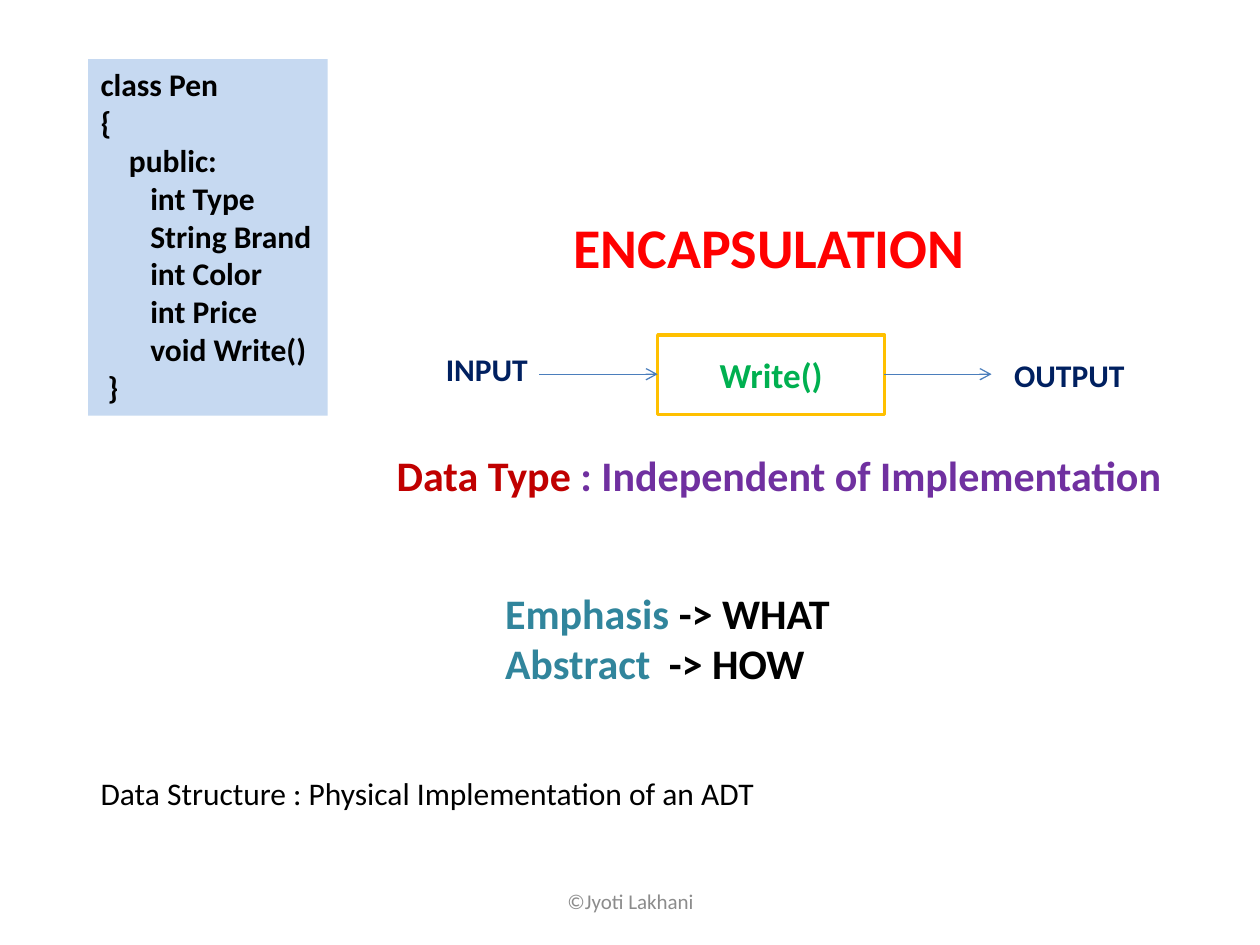
import pptx
import pptx.dml.color
import pptx.enum.shapes
import pptx.enum.text
import pptx.oxml.ns
import pptx.util
from lxml import etree

COLORS = {
    "black": "000000", "grey": "8C8C8C", "navy": "002060", "red": "FF0000",
    "dark_red": "C00000", "purple": "7030A0", "teal": "31859C",
    "green": "00B050", "gold": "FFC000", "blue": "4B7EBC", "pale": "C6D9F1",
}
ALIGN = pptx.enum.text.PP_ALIGN
ANCHOR = pptx.enum.text.MSO_ANCHOR
AUTO_SIZE = pptx.enum.text.MSO_AUTO_SIZE
COLUMNS, ROWS = 100, 75

CODE = """class Pen
{
    public:
       int Type
       String Brand
       int Color
       int Price
       void Write()
 }"""


def color(name):
    return pptx.dml.color.RGBColor.from_string(COLORS[name])


def add_xml(parent, tag, **attributes):
    return etree.SubElement(parent, pptx.oxml.ns.qn(tag), **attributes)


class SlideBuilder:
    """Style and current slide; lengths are columns and rows of a 100 x 75 grid."""

    font = "Calibri"

    def __init__(self, deck):
        self.column = deck.slide_width / COLUMNS
        self.row = deck.slide_height / ROWS
        self.slide = deck.slides.add_slide(deck.slide_layouts[5])

    def place(self, left, top, width, height):
        return (round(left * self.column), round(top * self.row),
                round(width * self.column), round(height * self.row))

    def fill_text(self, shape, paragraphs, size, bold=True, align=ALIGN.LEFT,
                  anchor=ANCHOR.TOP, fit=True, tab=None):
        """Fill a shape with paragraphs, each a list of (text, color name) runs."""
        frame = shape.text_frame
        frame.word_wrap = not fit
        frame.auto_size = AUTO_SIZE.SHAPE_TO_FIT_TEXT if fit else AUTO_SIZE.NONE
        frame.vertical_anchor = anchor
        for index, runs in enumerate(paragraphs):
            paragraph = frame.add_paragraph() if index else frame.paragraphs[0]
            paragraph.alignment = align
            if tab:
                stops = add_xml(paragraph._p.get_or_add_pPr(), "a:tabLst")
                add_xml(stops, "a:tab", pos=str(round(tab * self.column)), algn="l")
            for text, color_name in runs:
                run = paragraph.add_run()
                run.text = text
                run.font.name = self.font
                run.font.size = pptx.util.Pt(size)
                run.font.bold = bold
                run.font.color.rgb = color(color_name)

    def title(self, box, text, color_name, size):
        heading = self.slide.shapes.title
        heading.left, heading.top, heading.width, heading.height = self.place(*box)
        self.fill_text(heading, [[(text, color_name)]], size)

    def text(self, box, paragraphs, size, **style):
        self.fill_text(self.slide.shapes.add_textbox(*self.place(*box)),
                       paragraphs, size, **style)

    def panel(self, box, paragraphs, size, fill=None, outline=None, **style):
        panel = self.slide.shapes.add_shape(
            pptx.enum.shapes.MSO_SHAPE.RECTANGLE, *self.place(*box))
        panel.shadow.inherit = False
        if fill:
            panel.fill.solid()
            panel.fill.fore_color.rgb = color(fill)
        else:
            panel.fill.background()
        if outline:
            panel.line.color.rgb = color(outline)
            panel.line.width = pptx.util.Pt(2)
        else:
            panel.line.fill.background()
        self.fill_text(panel, paragraphs, size, **style)

    def arrow(self, start, end, row):
        arrow = self.slide.shapes.add_connector(
            pptx.enum.shapes.MSO_CONNECTOR.STRAIGHT,
            *self.place(start, row, end, row))
        arrow.line.color.rgb = color("blue")
        arrow.line.width = pptx.util.Pt(0.75)
        add_xml(arrow.line._get_or_add_ln(), "a:tailEnd", type="arrow")
        add_xml(arrow._element.spPr, "a:effectLst")


def main():
    deck = pptx.Presentation()
    deck.slide_width = pptx.util.Inches(10)
    deck.slide_height = pptx.util.Inches(7.5)
    page = SlideBuilder(deck)

    page.title((44.5, 16.4, 33.4, 6.4), "ENCAPSULATION", "red", 32)
    page.panel((7, 4.7, 19, 28.3),
               [[(line, "black")] for line in CODE.split("\n")], 18, fill="pale")

    page.panel((52.2, 26.6, 18, 6.3), [[("Write()", "green")]], 20,
               outline="gold", align=ALIGN.CENTER, anchor=ANCHOR.MIDDLE, fit=False)
    for start, end in ((42.8, 52.2), (70.2, 78.7)):
        page.arrow(start, end, 29.7)
    page.text((34.4, 27.3, 8.6, 4), [[("INPUT", "navy")]], 18)
    page.text((79.5, 27.8, 10.9, 4), [[("OUTPUT", "navy")]], 18)

    page.text((30.5, 35.2, 63.3, 5),
              [[("Data Type ", "dark_red"),
                (": Independent of Implementation", "purple")]], 24)
    page.text((39.1, 46.1, 28.8, 9.1),
              [[("Emphasis", "teal"), (" -> WHAT", "black")],
               [("Abstract", "teal"), ("\t-> HOW", "black")]], 24, tab=13)
    page.text((7, 60.9, 54.5, 4),
              [[("Data Structure : Physical Implementation of an ADT", "black")]],
              18, bold=False)
    page.text((34.2, 69.5, 31.7, 4), [[("©Jyoti Lakhani", "grey")]], 12, bold=False,
              align=ALIGN.CENTER, anchor=ANCHOR.MIDDLE, fit=False)

    deck.save("out.pptx")


if __name__ == "__main__":
    main()
